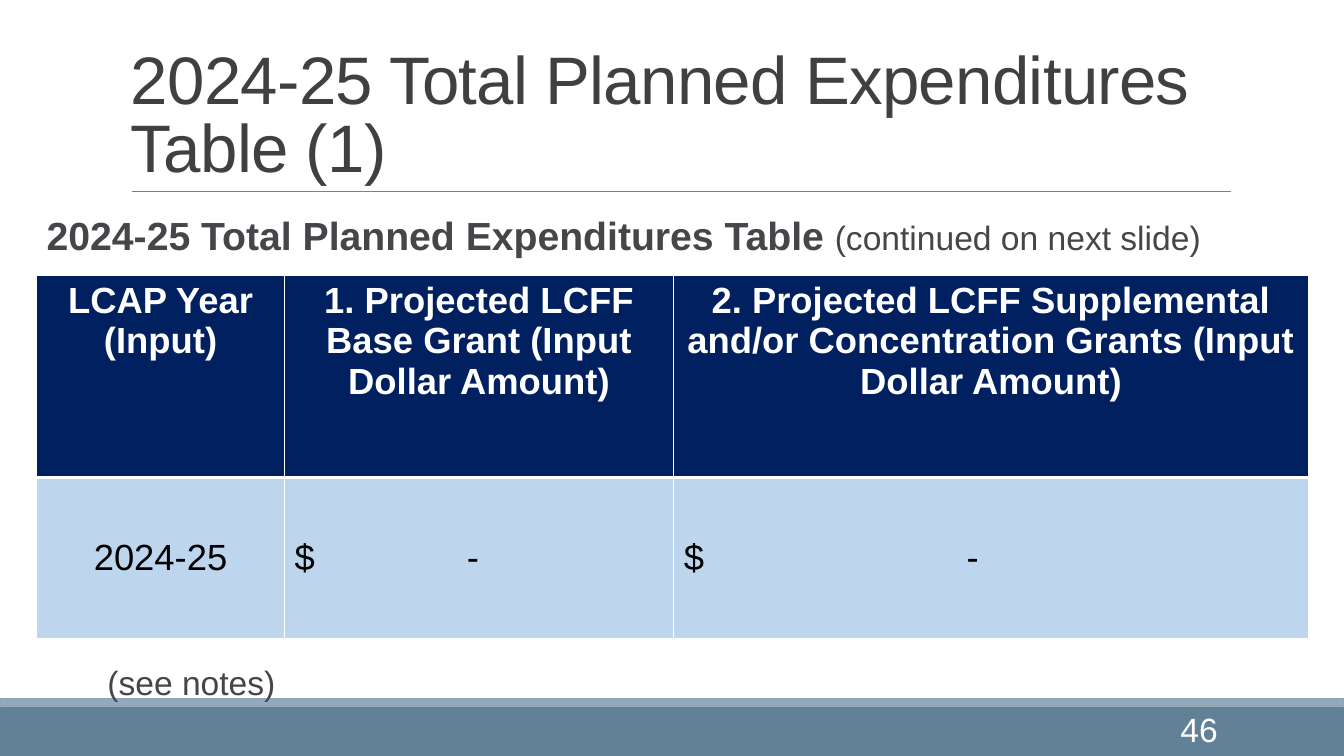
from lxml import etree
from pptx import Presentation
from pptx.dml.color import RGBColor
from pptx.enum.shapes import MSO_CONNECTOR, MSO_SHAPE
from pptx.enum.text import MSO_ANCHOR, PP_ALIGN
from pptx.oxml.ns import qn
from pptx.util import Pt

LEFT, CENTER, RIGHT = PP_ALIGN.LEFT, PP_ALIGN.CENTER, PP_ALIGN.RIGHT
TOP, MIDDLE, BOTTOM = MSO_ANCHOR.TOP, MSO_ANCHOR.MIDDLE, MSO_ANCHOR.BOTTOM
RECTANGLE = MSO_SHAPE.RECTANGLE
STRAIGHT = MSO_CONNECTOR.STRAIGHT

FONT = "Arial"
WHITE, BLACK = "FFFFFF", "000000"
TITLE_GREY, BODY_GREY = "404040", "46464A"
NAVY, PALE_BLUE = "002060", "BDD6EE"

COLUMN_WIDTHS = [177, 278, 453.5]
ROW_HEIGHTS = [144.5, 115]
HEADINGS = [
    "LCAP Year (Input)",
    "1. Projected LCFF Base Grant (Input Dollar Amount)",
    "2. Projected LCFF Supplemental and/or Concentration Grants (Input Dollar Amount)",
]
VALUES = [("2024-25", CENTER, None), ("$\t-", LEFT, 123), ("$\t-", LEFT, 202)]


def color(hex_string):
    return RGBColor.from_string(hex_string)


def format_span(span, size, hex_color, bold=False):
    span.font.name = FONT
    span.font.size = Pt(size)
    span.font.bold = bold
    span.font.color.rgb = color(hex_color)


def add_text(page, place, spans, hex_color, align=LEFT, anchor=MIDDLE, spacing=1.0):
    box = page.shapes.add_textbox(*map(Pt, place))
    frame = box.text_frame
    frame.word_wrap = True
    frame.vertical_anchor = anchor
    para = frame.paragraphs[0]
    para.alignment = align
    para.line_spacing = spacing
    for text, size, bold in spans:
        span = para.add_run()
        span.text = text
        format_span(span, size, hex_color, bold)
    return para


def add_band(page, place, fill, line=None):
    band = page.shapes.add_shape(RECTANGLE, *map(Pt, place))
    band.shadow.inherit = False
    band.fill.solid()
    band.fill.fore_color.rgb = color(fill)
    if line:
        band.line.color.rgb = color(line)
        band.line.width = Pt(1.25)
    else:
        band.line.fill.background()


def add_rule(page, left, right, top):
    rule = page.shapes.add_connector(STRAIGHT, Pt(left), Pt(top), Pt(right), Pt(top))
    rule.line.color.rgb = color("808080")
    rule.line.width = Pt(0.5)
    etree.SubElement(rule._element.spPr, qn("a:effectLst"))


def set_borders(cell, widths):
    properties = cell._tc.get_or_add_tcPr()
    for index, (side, width) in enumerate(widths.items()):
        border = etree.Element(qn(f"a:ln{side}"), w=str(Pt(width)))
        fill = etree.SubElement(border, qn("a:solidFill"))
        etree.SubElement(fill, qn("a:srgbClr"), val=WHITE)
        properties.insert(index, border)


def add_tab_stop(para, position):
    tabs = etree.SubElement(para._p.get_or_add_pPr(), qn("a:tabLst"))
    etree.SubElement(tabs, qn("a:tab"), pos=str(Pt(position)), algn="l")


def fill_cell(cell, text, fill, hex_color, bold, align, anchor, widths, tab=None):
    cell.fill.solid()
    cell.fill.fore_color.rgb = color(fill)
    set_borders(cell, widths)
    cell.vertical_anchor = anchor
    cell.text_frame.text = text
    para = cell.text_frame.paragraphs[0]
    para.alignment = align
    if tab:
        add_tab_stop(para, tab)
    for span in para.runs:
        format_span(span, 26, hex_color, bold)


def add_expenditure_table(page):
    frame = page.shapes.add_table(
        len(ROW_HEIGHTS), len(COLUMN_WIDTHS), Pt(26.25), Pt(196.5),
        Pt(sum(COLUMN_WIDTHS)), Pt(sum(ROW_HEIGHTS)))
    table = frame.table
    for column, width in zip(table.columns, COLUMN_WIDTHS):
        column.width = Pt(width)
    for row, height in zip(table.rows, ROW_HEIGHTS):
        row.height = Pt(height)
    header_borders = {"L": 1, "R": 1, "T": 1, "B": 3}
    value_borders = {"L": 1, "R": 1, "T": 3, "B": 1}
    for index, heading in enumerate(HEADINGS):
        fill_cell(table.cell(0, index), heading, NAVY, WHITE, True, CENTER, TOP,
                  header_borders)
    for index, (text, align, tab) in enumerate(VALUES):
        fill_cell(table.cell(1, index), text, PALE_BLUE, BLACK, False, align, MIDDLE,
                  value_borders, tab)


def main():
    deck = Presentation()
    deck.slide_width, deck.slide_height = Pt(960), Pt(540)
    page = deck.slides.add_slide(deck.slide_layouts[6])

    add_band(page, (0, 504.5, 960, 35.5), "618197")
    add_band(page, (0, 499, 960, 5), "92A9B9", "8FA3B6")
    add_rule(page, 94.25, 879, 136.75)

    title = add_text(page, (86.4, 22.5, 792, 114.25),
                     [("2024-25 Total Planned Expenditures Table (1)", 48, False)],
                     TITLE_GREY, anchor=BOTTOM, spacing=0.85)
    title.runs[0]._r.get_or_add_rPr().set("spc", "-50")

    add_text(page, (26.25, 140.5, 859, 58.5),
             [("2024-25 Total Planned Expenditures Table ", 28, True),
              ("(continued on next slide)", 24, False)],
             BODY_GREY, spacing=0.9)
    add_expenditure_table(page)
    add_text(page, (18, 460, 237.5, 58.5), [("(see notes)", 24, False)],
             BODY_GREY, align=CENTER, spacing=0.9)
    add_text(page, (774, 506, 103, 29), [("46", 24, False)], WHITE, align=RIGHT)

    deck.save("out.pptx")


if __name__ == "__main__":
    main()
